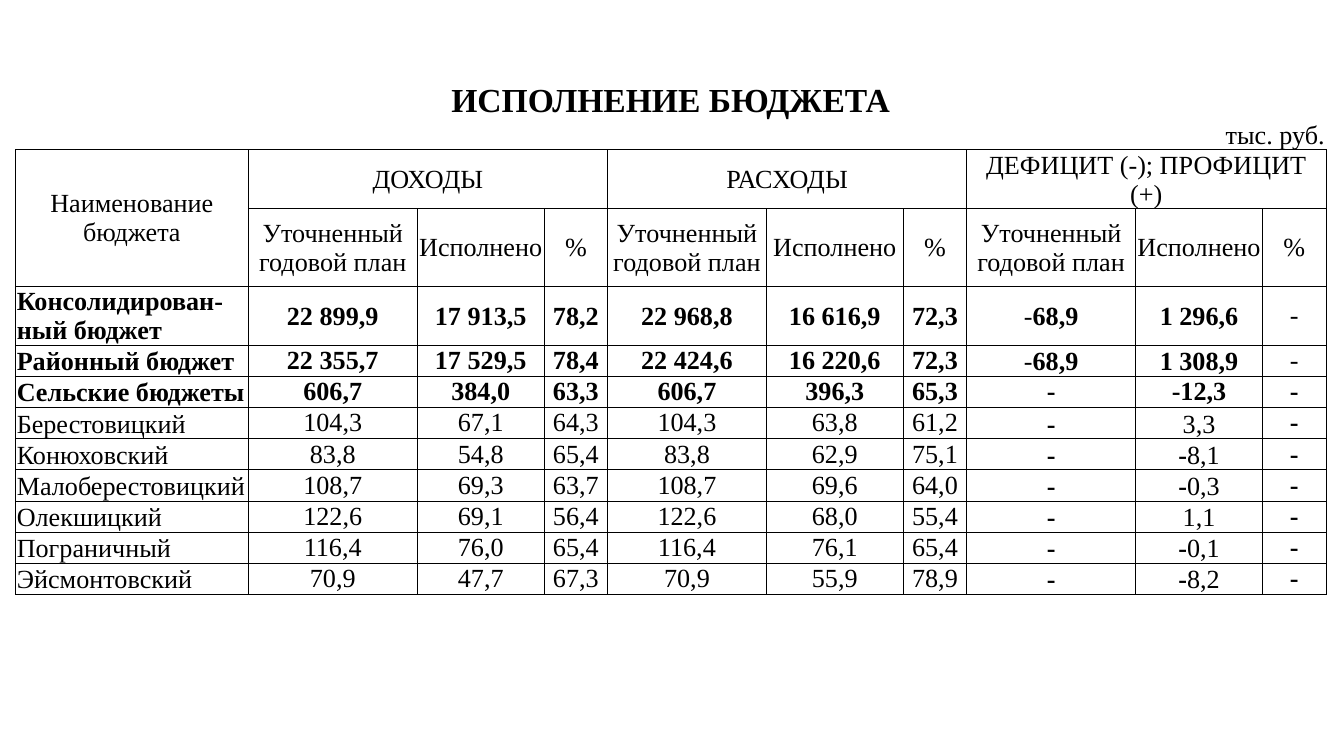
from dataclasses import dataclass

from lxml.etree import SubElement
from pptx import Presentation
from pptx.dml.color import RGBColor
from pptx.enum.text import MSO_ANCHOR, PP_ALIGN
from pptx.oxml.ns import qn
from pptx.table import Table, _Cell
from pptx.util import Pt

BLACK = RGBColor(0, 0, 0)
FONT = "Times New Roman"
INSET = 0.6
TOP, MIDDLE, BOTTOM = MSO_ANCHOR.TOP, MSO_ANCHOR.MIDDLE, MSO_ANCHOR.BOTTOM

COL_WIDTHS = [124.6, 72.6, 18, 47, 21, 34, 85, 15, 58.4, 6.5, 27.5, 90.5, 37.2, 30.8, 34]
ROW_HEIGHTS = [18, 15, 30, 41.5] + [15] * 9
UNIT_SPANS = [1, 1, 2, 2, 2, 2, 1, 2, 2]
GROUP_SPANS = [1, 5, 5, 4]
DATA_SPANS = [1, 2, 2, 1, 1, 2, 2, 1, 2, 1]
MEASURES = ["Уточненный годовой план", "Исполнено", "%"]


@dataclass(frozen=True)
class Budget:
    name: str
    income: tuple[str, str, str]
    expense: tuple[str, str, str]
    balance: tuple[str, str, str]


@dataclass(frozen=True)
class Style:
    size: float = 14
    bold: bool = False
    dash_bold: bool = False
    align: PP_ALIGN = PP_ALIGN.CENTER
    anchor: MSO_ANCHOR = MIDDLE
    bottom: float = 0


BUDGETS = [
    Budget("Консолидирован-ный бюджет", ("22 899,9", "17 913,5", "78,2"),
           ("22 968,8", "16 616,9", "72,3"), ("-68,9", "1 296,6", "-")),
    Budget("Районный бюджет", ("22 355,7", "17 529,5", "78,4"),
           ("22 424,6", "16 220,6", "72,3"), ("-68,9", "1 308,9", "-")),
    Budget("Сельские бюджеты", ("606,7", "384,0", "63,3"),
           ("606,7", "396,3", "65,3"), ("-", "-12,3", "-")),
    Budget("Берестовицкий", ("104,3", "67,1", "64,3"), ("104,3", "63,8", "61,2"), ("-", "3,3", "-")),
    Budget("Конюховский", ("83,8", "54,8", "65,4"), ("83,8", "62,9", "75,1"), ("-", "-8,1", "-")),
    Budget("Малоберестовицкий", ("108,7", "69,3", "63,7"), ("108,7", "69,6", "64,0"), ("-", "-0,3", "-")),
    Budget("Олекшицкий", ("122,6", "69,1", "56,4"), ("122,6", "68,0", "55,4"), ("-", "1,1", "-")),
    Budget("Пограничный", ("116,4", "76,0", "65,4"), ("116,4", "76,1", "65,4"), ("-", "-0,1", "-")),
    Budget("Эйсмонтовский", ("70,9", "47,7", "67,3"), ("70,9", "55,9", "78,9"), ("-", "-8,2", "-")),
]


def set_borders(cell: _Cell, sides: str) -> None:
    tc_pr = cell._tc.get_or_add_tcPr()
    for i, side in enumerate("LRTB"):
        ln = SubElement(tc_pr, qn(f"a:ln{side}"), w=str(Pt(0.5)))
        if side in sides:
            fill = SubElement(ln, qn("a:solidFill"))
            SubElement(fill, qn("a:srgbClr"), val=str(BLACK))
        else:
            SubElement(ln, qn("a:noFill"))
        tc_pr.insert(i, ln)


def split_runs(text: str, style: Style) -> list[tuple[str, bool]]:
    if not text.startswith("-"):
        return [(text, style.bold)]
    if text == "-" or style.bold == style.dash_bold:
        return [(text, style.dash_bold)]
    return [("-", style.dash_bold), (text[1:], style.bold)]


def write_cell(cell: _Cell, text: str, style: Style) -> None:
    cell.margin_left = cell.margin_right = cell.margin_top = Pt(INSET)
    cell.margin_bottom = Pt(style.bottom)
    cell.vertical_anchor = style.anchor
    tf = cell.text_frame
    for i, line in enumerate(text.split("\n")):
        p = tf.add_paragraph() if i else tf.paragraphs[0]
        p.alignment = style.align
        if not line:
            SubElement(p._p, qn("a:endParaRPr"), sz=str(int(style.size * 100)))
            continue
        for part, bold in split_runs(line, style):
            r = p.add_run()
            r.text = part
            r.font.name = FONT
            r.font.size = Pt(style.size)
            r.font.bold = bold
            r.font.color.rgb = BLACK


def write_row(table: Table, row: int, spans: list[int], texts: list[str], styles: list[Style]) -> None:
    col = 0
    for span, text, style in zip(spans, texts, styles):
        cell = table.cell(row, col)
        if span > 1:
            cell.merge(table.cell(row, col + span - 1))
        if not cell.is_spanned:
            write_cell(cell, text, style)
        col += span


def budget_styles(i: int) -> list[Style]:
    bold, dash_bold = i < 3, i >= 2
    value_anchor = TOP if i else MIDDLE
    balance_anchor = value_anchor if i in (0, 2) else BOTTOM
    name = Style(bold=bold, align=PP_ALIGN.LEFT, anchor=BOTTOM)
    value = Style(bold=bold, dash_bold=dash_bold, anchor=value_anchor)
    balance = Style(bold=bold, dash_bold=dash_bold, anchor=balance_anchor)
    share = Style(bold=bold, dash_bold=dash_bold, bottom=INSET)
    return [name] + [value] * 6 + [balance] * 2 + [share]


def build_table(table: Table) -> None:
    table.first_row = table.horz_banding = False
    for col, width in zip(table.columns, COL_WIDTHS):
        col.width = Pt(width)
    for i, (row, height) in enumerate(zip(table.rows, ROW_HEIGHTS)):
        row.height = Pt(height)
        for cell in row.cells:
            cell.fill.background()
            set_borders(cell, ("", "B")[i] if i < 2 else "LRTB")

    head = Style()
    write_row(table, 0, [15], ["ИСПОЛНЕНИЕ БЮДЖЕТА"], [Style(size=18, bold=True)])
    unit = Style(align=PP_ALIGN.RIGHT, anchor=BOTTOM)
    write_row(table, 1, UNIT_SPANS, [""] * 8 + ["тыс. руб."], [Style(size=10)] * 8 + [unit])
    table.cell(2, 0).merge(table.cell(3, 0))
    groups = ["Наименование\nбюджета", "ДОХОДЫ", "РАСХОДЫ", "ДЕФИЦИТ (-); ПРОФИЦИТ (+)"]
    write_row(table, 2, GROUP_SPANS, groups, [head] * 4)
    write_row(table, 3, DATA_SPANS, [""] + MEASURES * 3, [head] * 10)
    for i, b in enumerate(BUDGETS):
        texts = [b.name, *b.income, *b.expense, *b.balance]
        write_row(table, 4 + i, DATA_SPANS, texts, budget_styles(i))


def main() -> None:
    prs = Presentation()
    prs.slide_width, prs.slide_height = Pt(720), Pt(405)
    s = prs.slides.add_slide(prs.slide_layouts[6])
    frame = s.shapes.add_table(len(ROW_HEIGHTS), len(COL_WIDTHS), Pt(8.4), Pt(43.6),
                               Pt(sum(COL_WIDTHS)), Pt(sum(ROW_HEIGHTS)))
    build_table(frame.table)
    prs.save("out.pptx")


if __name__ == "__main__":
    main()
